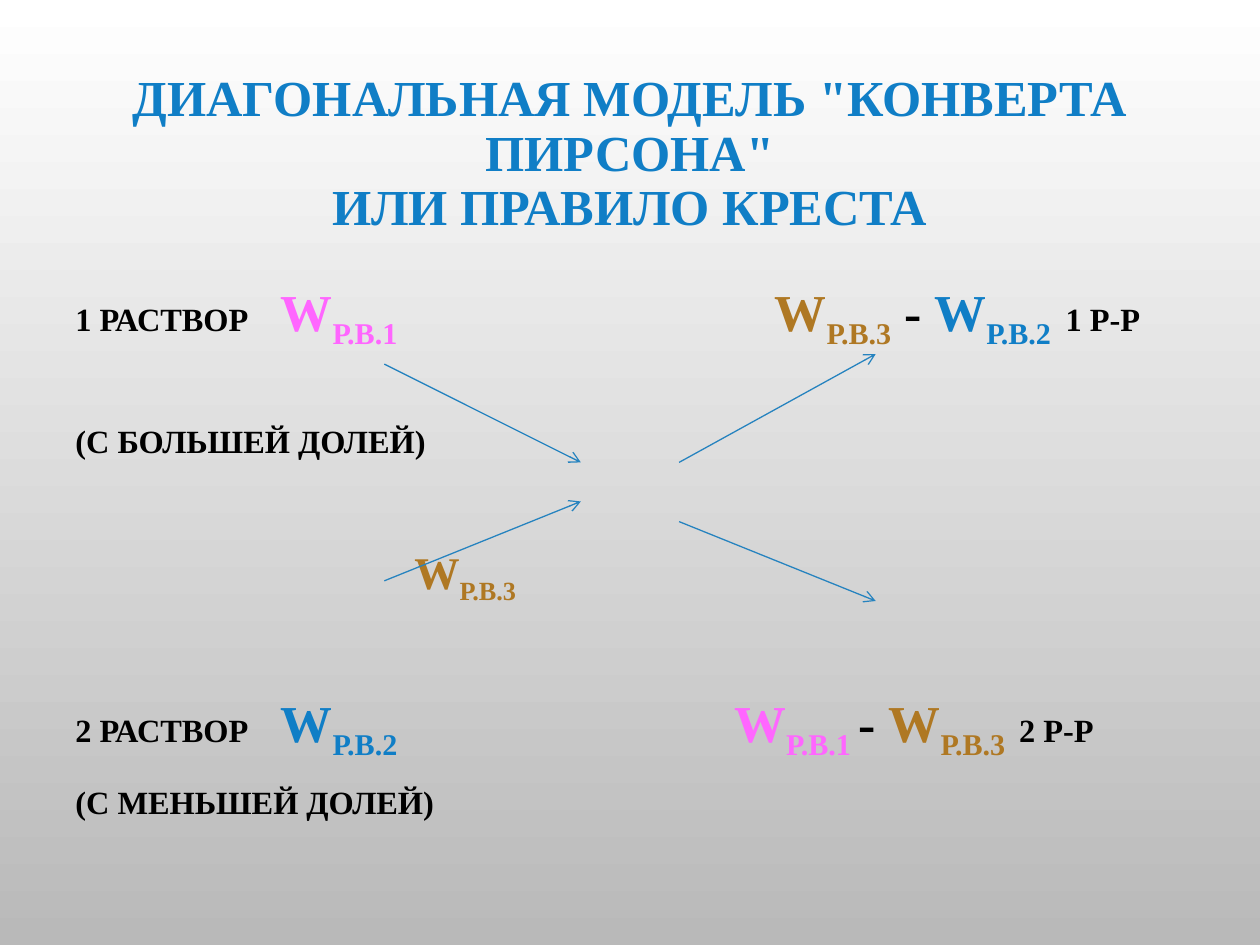
"""Build the slide about the diagonal rule for mixing solutions."""
from lxml import etree
from pptx import Presentation, util as u
from pptx.dml.color import RGBColor
from pptx.enum import shapes, text
from pptx.oxml.ns import qn

COLORS = {
    "blue": "107EC6", "pink": "FF66FF", "brown": "AF7823", "black": "000000",
    "line": "2683BF", "top": "FFFFFF", "bottom": "B9B9B9",
}
FRACTION_COLORS = {1: "pink", 2: "blue", 3: "brown"}
LABEL, SYMBOL, CENTER_SYMBOL, TITLE = 18.5, 29.6, 25.9, 28.8


def rgb(name):
    return RGBColor.from_string(COLORS[name])


def add_run(paragraph, words, size=LABEL, color="black", baseline=None):
    run = paragraph.add_run()
    run.text = words
    run.font.name = "Times New Roman"
    run.font.size = u.Pt(size)
    run.font.bold = True
    run.font.color.rgb = rgb(color)
    if baseline:
        run.font._element.set("baseline", str(baseline * 1000))


def fraction(number, size=SYMBOL, ending=""):
    color = FRACTION_COLORS[number]
    return [("W", dict(size=size, color=color)),
            (f"Р.В.{number}{ending}", dict(size=size, color=color, baseline=-25))]


class SlideBuilder:
    """Hold the slide and its grid, with a method for each kind of element."""

    COLUMNS, ROWS = 100, 75

    def __init__(self, presentation):
        self.presentation = presentation
        self.slide = presentation.slides.add_slide(presentation.slide_layouts[6])

    def x(self, columns):
        return round(self.presentation.slide_width * columns / self.COLUMNS)

    def y(self, rows):
        return round(self.presentation.slide_height * rows / self.ROWS)

    def background(self):
        fill = self.slide.background.fill
        fill.gradient()
        fill.gradient_angle = 270
        for stop, name in zip(fill.gradient_stops, ("top", "bottom")):
            stop.color.rgb = rgb(name)

    def text_box(self, left, top, width, height):
        shape = self.slide.shapes.add_textbox(
            self.x(left), self.y(top), self.x(width), self.y(height))
        shape.text_frame.word_wrap = True
        return shape.text_frame

    def title(self, lines, *box):
        frame = self.text_box(*box)
        frame.margin_top = 0
        paragraph = frame.paragraphs[0]
        paragraph.alignment = text.PP_ALIGN.CENTER
        paragraph.line_spacing = 0.9
        for index, line in enumerate(lines):
            if index:
                paragraph.add_line_break()
            add_run(paragraph, line, size=TITLE, color="blue")

    def body(self, rows, *box):
        frame = self.text_box(*box)
        for index, (space, tabs, runs) in enumerate(rows):
            paragraph = frame.add_paragraph() if index else frame.paragraphs[0]
            paragraph.line_spacing = 1.1
            paragraph.space_before = u.Pt(space)
            if tabs:
                tab_list = etree.SubElement(
                    paragraph._p.get_or_add_pPr(), qn("a:tabLst"))
                for tab in tabs:
                    etree.SubElement(tab_list, qn("a:tab"),
                                     pos=str(self.x(tab)), algn="l")
            for words, style in runs:
                add_run(paragraph, words, **style)

    def arrow(self, start, end):
        connector = self.slide.shapes.add_connector(
            shapes.MSO_CONNECTOR.STRAIGHT, self.x(start[0]), self.y(start[1]),
            self.x(end[0]), self.y(end[1]))
        connector.line.color.rgb = rgb("line")
        connector.line.width = u.Pt(0.75)
        etree.SubElement(connector.line._get_or_add_ln(), qn("a:tailEnd"), type="arrow")
        etree.SubElement(connector._element.spPr, qn("a:effectLst"))


def solution_row(number, minuend, subtrahend, minus, ending=""):
    return [(f"{number} РАСТВОР\t", {}), *fraction(number), ("\t", {}),
            *fraction(minuend, ending=ending), (minus, dict(size=SYMBOL)),
            *fraction(subtrahend), (f"\t{number} Р-Р", {})]


def main():
    presentation = Presentation()
    presentation.slide_width, presentation.slide_height = u.Inches(10), u.Inches(7.5)
    builder = SlideBuilder(presentation)
    builder.background()
    builder.title(['ДИАГОНАЛЬНАЯ МОДЕЛЬ "КОНВЕРТА ПИРСОНА"', "ИЛИ ПРАВИЛО КРЕСТА"],
                  7.5, 5.8, 85, 17.5)
    builder.body([
        (0, (16.3, 55.5, 78.6), solution_row(1, 3, 2, " - ")),
        (38.5, (), [("(С БОЛЬШЕЙ ДОЛЕЙ)", {})]),
        (44.4, (26.9,), [("\t", {}), *fraction(3, CENTER_SYMBOL)]),
        (44.4, (16.3, 52.3, 74.9), solution_row(2, 1, 3, "- ", ending=" ")),
        (9.5, (), [("(С МЕНЬШЕЙ ДОЛЕЙ)", {})]),
    ], 5, 21.13, 90, 48)
    outer_left, inner_left, inner_right, outer_right = 30.5, 46.1, 53.9, 69.5
    for start, end in (
        ((outer_left, 28.9), (inner_left, 36.7)),
        ((outer_left, 46.1), (inner_left, 39.8)),
        ((inner_right, 36.7), (outer_right, 28.1)),
        ((inner_right, 41.4), (outer_right, 47.7)),
    ):
        builder.arrow(start, end)
    presentation.save("out.pptx")


if __name__ == "__main__":
    main()
